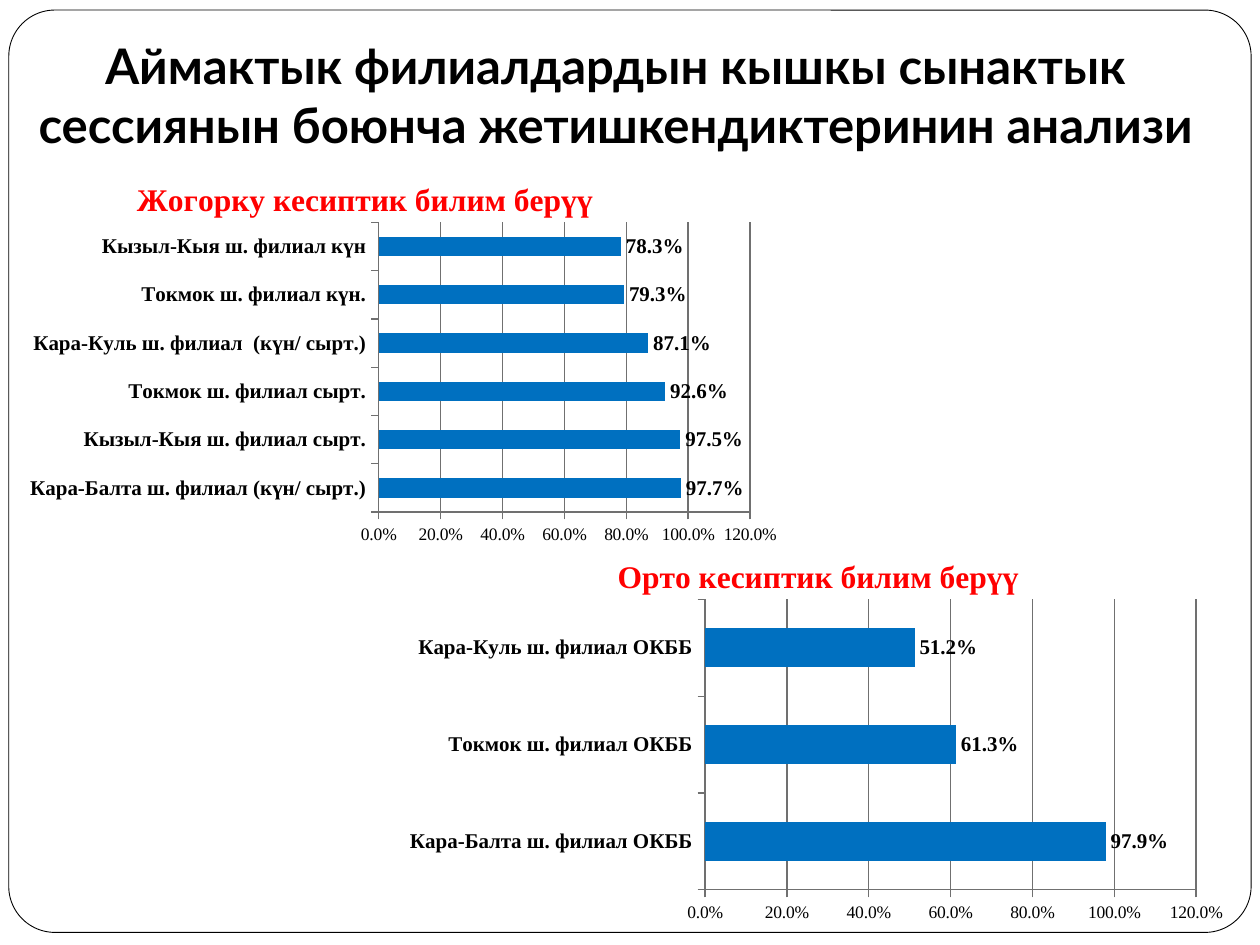
from lxml import etree
from pptx import Presentation
from pptx.chart.data import CategoryChartData
from pptx.dml.color import RGBColor
from pptx.enum.chart import XL_CHART_TYPE, XL_LABEL_POSITION, XL_TICK_MARK
from pptx.enum.shapes import MSO_SHAPE
from pptx.enum.text import MSO_ANCHOR, MSO_AUTO_SIZE, PP_ALIGN
from pptx.oxml.ns import qn
from pptx.util import Inches, Pt

BARS = XL_CHART_TYPE.BAR_CLUSTERED
OUT_END = XL_LABEL_POSITION.OUTSIDE_END
TICK = XL_TICK_MARK.OUTSIDE
NO_TICK = XL_TICK_MARK.NONE
ROUND = MSO_SHAPE.ROUNDED_RECTANGLE
BOTTOM = MSO_ANCHOR.BOTTOM
NO_FIT = MSO_AUTO_SIZE.NONE
CENTER = PP_ALIGN.CENTER

BLACK = RGBColor(0x00, 0x00, 0x00)
WHITE = RGBColor(0xFF, 0xFF, 0xFF)
RED = RGBColor(0xFF, 0x00, 0x00)
BLUE = RGBColor(0x00, 0x70, 0xC0)
GRAY = RGBColor(0x70, 0x70, 0x70)

WIDE, HIGH = Inches(10), Inches(7.5)
SANS, SERIF = "Lato", "Times New Roman"
RATE = "0.0%"

HEAD = "Аймактык филиалдардын кышкы сынактык сессиянын боюнча жетишкендиктеринин анализи"
UPPER = {
    "Кара-Балта ш. филиал (күн/ сырт.)": 0.977,
    "Кызыл-Кыя ш. филиал сырт.": 0.975,
    "Токмок ш. филиал сырт.": 0.926,
    "Кара-Куль ш. филиал  (күн/ сырт.)": 0.871,
    "Токмок ш. филиал күн.": 0.793,
    "Кызыл-Кыя ш. филиал күн": 0.783,
}
LOWER = {
    "Кара-Балта ш. филиал ОКББ": 0.979,
    "Токмок ш. филиал ОКББ": 0.613,
    "Кара-Куль ш. филиал ОКББ": 0.512,
}


def share(left, top, width, height):
    return (round(left * WIDE / 10), round(top * HIGH / 7.5),
            round(width * WIDE / 10), round(height * HIGH / 7.5))


def style(font, size, color=BLACK, bold=False, name=SERIF):
    font.size, font.bold, font.name = Pt(size), bold, name
    font.color.rgb = color


def write(frame, text, align=CENTER, **form):
    para = frame.paragraphs[0]
    para.alignment = align
    run = para.add_run()
    run.text = text
    style(run.font, **form)


def layout(node, index, **parts):
    for old in node.findall(qn("c:layout")):
        node.remove(old)
    outer = etree.Element(qn("c:layout"))
    inner = etree.SubElement(outer, qn("c:manualLayout"))
    for key, val in parts.items():
        etree.SubElement(inner, qn("c:" + key)).set("val", str(val))
    node.insert(index, outer)


def add_frame(slide, box):
    frame = slide.shapes.add_shape(ROUND, *box)
    frame.adjustments[0] = 0.05
    frame.shadow.inherit = False
    frame.fill.solid()
    frame.fill.fore_color.rgb = WHITE
    frame.line.color.rgb = BLACK
    frame.line.width = Pt(0.5)
    slide.shapes.title.element.addprevious(frame.element)


def add_head(slide, box):
    title = slide.shapes.title
    title.left, title.top, title.width, title.height = box
    text = title.text_frame
    text.word_wrap = True
    text.auto_size = NO_FIT
    text.vertical_anchor = BOTTOM
    text.margin_left = text.margin_right = text.margin_bottom = Inches(0.1)
    text.margin_top = Inches(0.05)
    write(text, HEAD, size=28, bold=True, name=SANS)


def add_bars(slide, box, name, rates, spot, plot):
    data = CategoryChartData(number_format=RATE)
    data.categories = list(rates)
    data.add_series("Series 1", list(rates.values()))
    chart = slide.shapes.add_chart(BARS, *box, data).chart
    chart.has_legend = False
    style(chart.font, 10)

    chart.has_title = True
    title = chart.chart_title
    write(title.text_frame, name, size=18, color=RED, bold=True)
    title.include_in_layout = False
    layout(title.element, 1, xMode="edge", yMode="edge", x=spot[0], y=spot[1])

    cats, vals = chart.category_axis, chart.value_axis
    style(cats.tick_labels.font, 12, bold=True)
    style(vals.tick_labels.font, 10)
    vals.minimum_scale, vals.maximum_scale, vals.major_unit = 0, 1.2, 0.2
    vals.tick_labels.number_format = RATE
    vals.tick_labels.number_format_is_linked = False
    vals.has_major_gridlines = True
    for axis in (cats, vals):
        axis.major_tick_mark, axis.minor_tick_mark = TICK, NO_TICK
    for item in (cats, vals, vals.major_gridlines):
        item.format.line.color.rgb = GRAY
        item.format.line.width = Pt(0.75)

    bars = chart.plots[0]
    bars.gap_width = 150
    bars.vary_by_categories = False
    fill = bars.series[0].format.fill
    fill.solid()
    fill.fore_color.rgb = BLUE
    labels = bars.series[0].data_labels
    labels.show_value = True
    labels.number_format = RATE
    labels.number_format_is_linked = False
    labels.position = OUT_END
    style(labels.font, 12, bold=True)

    area = chart.element.find(".//" + qn("c:plotArea"))
    layout(area, 0, layoutTarget="inner", xMode="edge", yMode="edge",
           x=plot[0], y=plot[1], w=plot[2], h=plot[3])


def main():
    deck = Presentation()
    deck.slide_width, deck.slide_height = WIDE, HIGH
    slide = deck.slides.add_slide(deck.slide_layouts[5])
    add_frame(slide, share(0.07, 0.08, 9.86, 7.32))
    add_head(slide, share(0.12, 0.21, 9.53, 1.11))
    add_bars(slide, share(0.12, 1.23, 6.14, 3.15), "Жогорку кесиптик билим берүү",
             UPPER, (0.15, 0.05), (0.47, 0.17, 0.48, 0.73))
    add_bars(slide, share(3.11, 4.22, 6.72, 3.16), "Орто кесиптик билим берүү",
             LOWER, (0.26, 0.05), (0.37, 0.17, 0.58, 0.73))
    deck.save("out.pptx")


if __name__ == "__main__":
    main()
